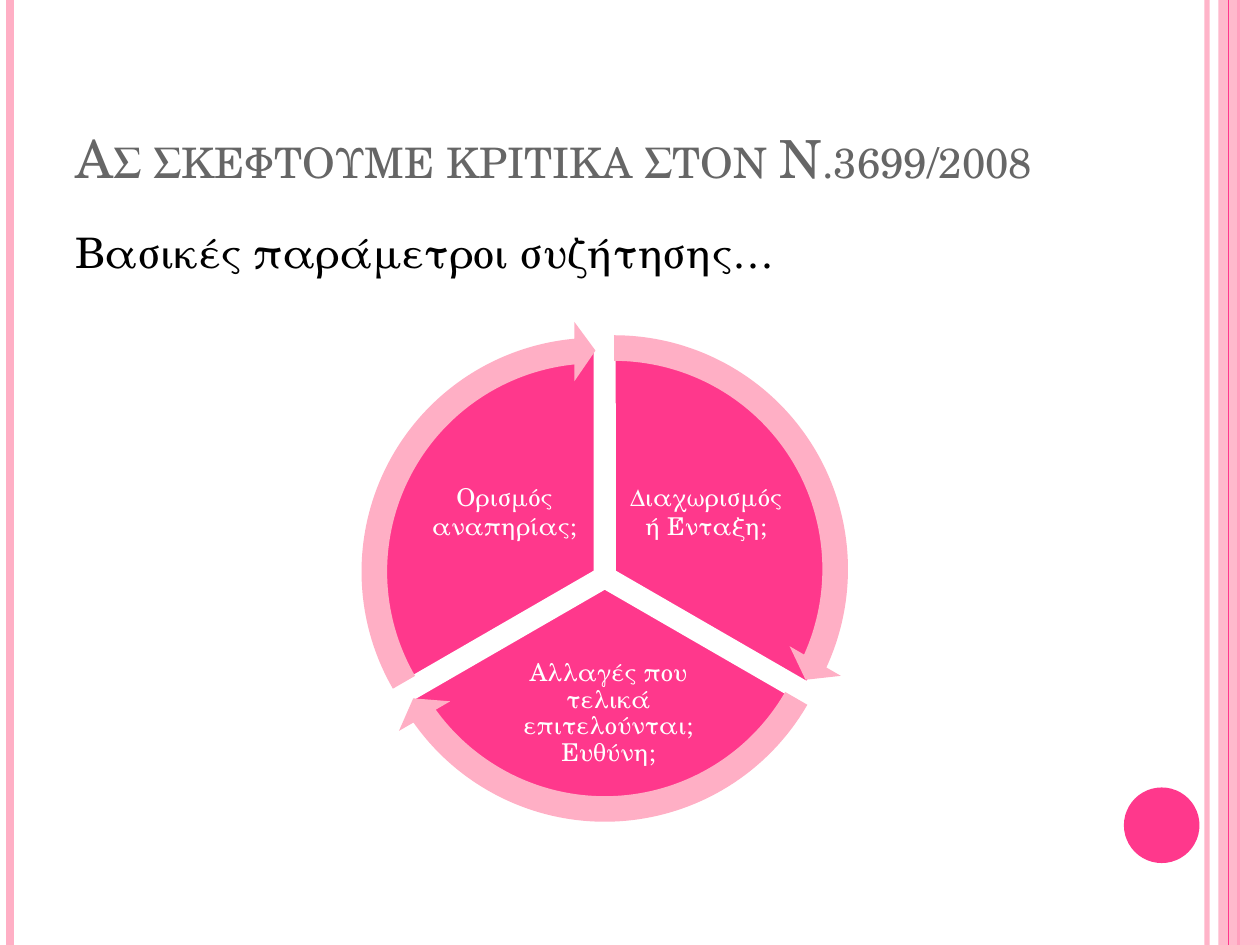
import math
from dataclasses import dataclass

from lxml import etree
from pptx import Presentation
from pptx import util as u
from pptx.dml.color import RGBColor
from pptx.enum import shapes, text
from pptx.oxml import ns

SHAPE = shapes.MSO_SHAPE
ALIGN = text.PP_ALIGN
ANCHOR = text.MSO_ANCHOR


@dataclass(frozen=True)
class Theme:
    pink: str = "FF388C"
    pale: str = "FFAFC5"
    gray: str = "666666"
    black: str = "000000"
    white: str = "FFFFFF"
    font: str = "TeX Gyre Schola"
    title: int = 30
    body: int = 24
    label: int = 14


T = Theme()


def inches(*vals):
    return [u.Inches(v) for v in vals]


def fade(fill, pct):
    """Set the opacity of a solid fill, in percent."""
    tint = fill._xPr.find(".//" + ns.qn("a:srgbClr"))
    etree.SubElement(tint, ns.qn("a:alpha")).set("val", str(pct * 1000))


def rule(pen, x, top, high, color, width, alpha=None):
    line = pen.add_connector(shapes.MSO_CONNECTOR.STRAIGHT,
                             *inches(x, top, x, top + high))
    line.line.color.rgb = RGBColor.from_string(color)
    line.line.width = u.Pt(width)
    etree.SubElement(line._element.spPr, ns.qn("a:effectLst"))
    if alpha:
        fade(line.line.fill, alpha)


def solid(pen, kind, box, color, edge=None, adjust=()):
    part = pen.add_shape(kind, *inches(*box))
    part.shadow.inherit = False
    part.fill.solid()
    part.fill.fore_color.rgb = RGBColor.from_string(color)
    if edge:
        part.line.color.rgb = RGBColor.from_string(edge)
        part.line.width = u.Pt(2)
    else:
        part.line.fill.background()
    for i, val in enumerate(adjust):
        part.adjustments[i] = val
    return part


def write(pen, box, words, size, color, anchor=ANCHOR.TOP,
          align=ALIGN.LEFT, inset=None, space=None):
    frame = pen.add_textbox(*inches(*box)).text_frame
    frame.word_wrap = True
    frame.vertical_anchor = anchor
    if inset is not None:
        frame.margin_left = frame.margin_right = u.Inches(inset)
        frame.margin_top = frame.margin_bottom = u.Inches(inset)
    para = frame.paragraphs[0]
    para.text = words
    para.alignment = align
    para.line_spacing = space
    run = para.runs[0]
    run.font.name = T.font
    run.font.size = u.Pt(size)
    run.font.color.rgb = RGBColor.from_string(color)
    return run


def frame_page(pen, box):
    """Side rules, right band and the corner dot."""
    left, top, wide, high = box
    right = left + wide
    rule(pen, right - 0.42, top, high, T.pale, 3, 93)
    rule(pen, left + 0.08, top, high, T.pale, 4.5)
    rule(pen, right - 0.17, top, high, T.pink, 1.5)
    band = solid(pen, SHAPE.RECTANGLE, (right - 0.33, top, 0.33, high), T.pale)
    fade(band.fill, 87)
    rule(pen, right - 0.25, top, high, T.pink, 0.75)
    solid(pen, SHAPE.OVAL, (right - 1.08, top + high - 1.25, 0.6, 0.6), T.pink)


def heading(pen, box):
    """Title in small caps, with the lead line below."""
    left, top, wide, high = box
    run = write(pen, (left, top, wide, 1.25),
                "Ασ σκεφτουμε κριτικα στον Ν.3699/2008",
                T.title, T.gray, ANCHOR.BOTTOM)
    run._r.get_or_add_rPr().set("cap", "small")
    write(pen, (left, top + 1.45, wide, high - 1.45),
          "Βασικές παράμετροι συζήτησης…", T.body, T.black)


def wheel(pen, box):
    """Three sectors pushed apart, each followed by an arrow."""
    left, top, size = box
    group = pen.add_group_shape().shapes
    mid_x, mid_y = left + size / 2, top + size / 2
    pie, gap = 3.54, 0.085
    turn, step, head = 216, 72, 3.275  # angles: 0.6 units to a degree
    # words, label box from the centre, line spacing, arrow nudge
    parts = [
        ("Διαχωρισμός ή Ένταξη;", (0.17, -1.05, 1.27, 1.05), None, -0.02),
        ("Αλλαγές που τελικά επιτελούνται; Ευθύνη;",
         (-0.92, 0.62, 1.9, 0.93), 0.9, 0),
        ("Ορισμός αναπηρίας;", (-1.43, -1.05, 1.27, 1.05), None, 0),
    ]
    arrows = []
    for i, (words, (dx, dy, wide, high), space, nudge) in enumerate(parts):
        start = (162 + step * i) % turn
        end = (start + step) % turn
        angle = math.radians(120 * i - 30)
        x = mid_x + gap * math.cos(angle)
        y = mid_y + gap * math.sin(angle)
        solid(group, SHAPE.PIE, (x - pie / 2, y - pie / 2, pie, pie),
              T.pink, T.white, (start, end))
        write(group, (mid_x + dx, mid_y + dy, wide, high), words, T.label,
              T.white, ANCHOR.MIDDLE, ALIGN.CENTER, 0.02, space)
        arrows.append(((x - size / 2, y - size / 2 + nudge, size, size),
                       (0.051, head, end - head, start, 0.059)))
    for spot, adjust in arrows:
        solid(group, SHAPE.CIRCULAR_ARROW, spot, T.pale, adjust=adjust)


def main():
    deck = Presentation()
    deck.slide_width, deck.slide_height = inches(10, 7.5)
    pen = deck.slides.add_slide(deck.slide_layouts[6]).shapes
    frame_page(pen, (0, 0, 10, 7.5))
    heading(pen, (0.5, 0.3, 8.17, 6.78))
    wheel(pen, (2.81, 2.59, 3.98))
    deck.save("out.pptx")


if __name__ == "__main__":
    main()
